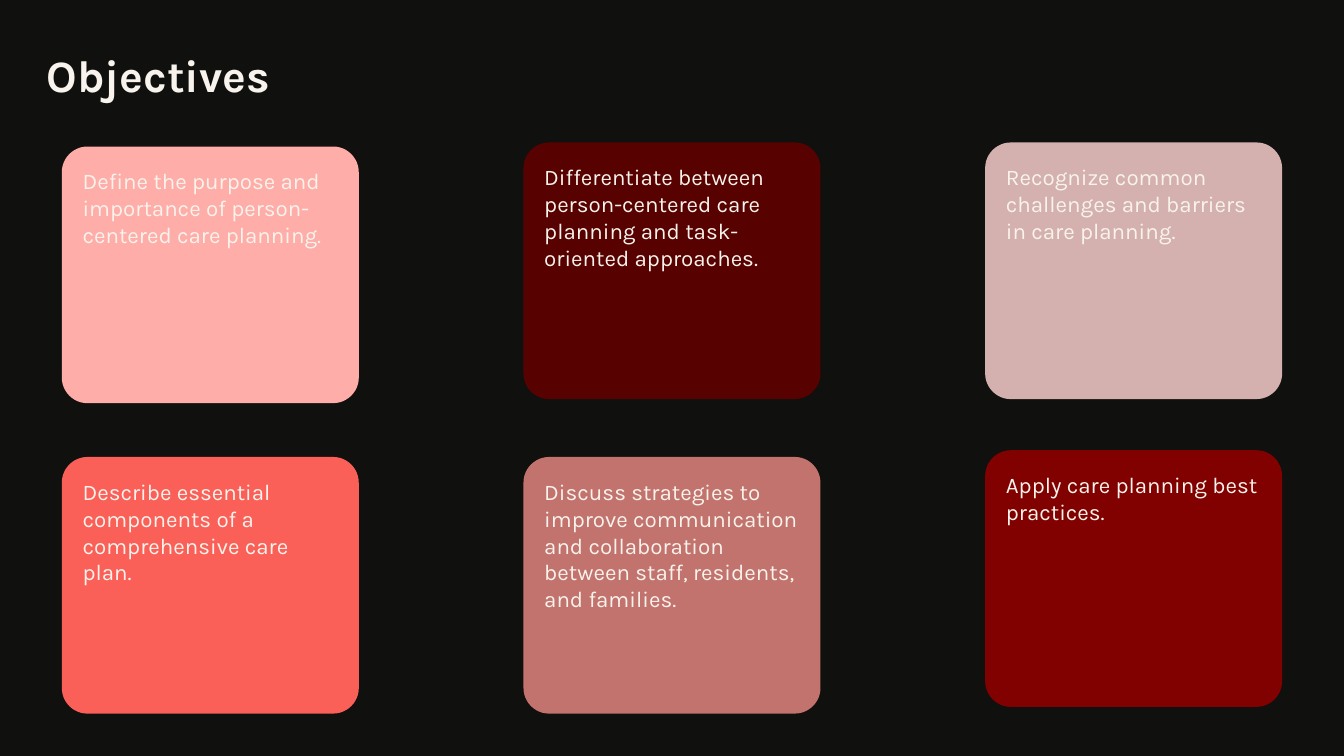
from pptx import Presentation
from pptx.dml.color import RGBColor
from pptx.enum.shapes import MSO_SHAPE
from pptx.enum.text import MSO_ANCHOR, PP_ALIGN
from pptx.util import Inches, Pt

ROUNDED = MSO_SHAPE.ROUNDED_RECTANGLE
TOP, MIDDLE = MSO_ANCHOR.TOP, MSO_ANCHOR.MIDDLE
LEFT = PP_ALIGN.LEFT

COLORS = {
    "background": "10100F",
    "text": "F8F3EC",
    "pink": "FFADA8",
    "coral": "FB6058",
    "maroon": "570100",
    "rose": "C3736E",
    "dusty": "D4B1AE",
    "crimson": "810100",
}
FONT = "Karla"
SLIDE_WIDTH = 10
SLIDE_HEIGHT = SLIDE_WIDTH * 9 / 16
INSET = 0.1
CARD_WIDTH, CARD_HEIGHT = 2.21, 1.91
SIDE_MARGIN = 0.46
COLUMN_STEP = (SLIDE_WIDTH - 2 * SIDE_MARGIN - CARD_WIDTH) / 2


def color(name):
    return RGBColor.from_string(COLORS[name])


def write(holder, text, size, anchor, bold=False):
    frame = holder.text_frame
    frame.word_wrap = True
    frame.vertical_anchor = anchor
    frame.margin_left = frame.margin_right = Inches(INSET)
    frame.margin_top = frame.margin_bottom = Inches(INSET)
    frame.text = text
    paragraph = frame.paragraphs[0]
    paragraph.alignment = LEFT
    font = paragraph.runs[0].font
    font.name = FONT
    font.size = Pt(size)
    font.bold = bold
    font.color.rgb = color("text")


presentation = Presentation()
presentation.slide_width = Inches(SLIDE_WIDTH)
presentation.slide_height = Inches(SLIDE_HEIGHT)
slide = presentation.slides.add_slide(presentation.slide_layouts[6])
slide.background.fill.solid()
slide.background.fill.fore_color.rgb = color("background")

heading = slide.shapes.add_textbox(Inches(0.25), Inches(0.25), Inches(7.02), Inches(0.61))
write(heading, "Objectives", 24, MIDDLE, bold=True)

objectives = [
    (0, 1.09, "pink", "Define the purpose and importance of person-centered care planning."),
    (0, 3.4, "coral", "Describe essential components of a comprehensive care plan."),
    (1, 1.06, "maroon", "Differentiate between person-centered care planning and task-oriented approaches."),
    (1, 3.4, "rose", "Discuss strategies to improve communication and collaboration between staff, residents, and families."),
    (2, 1.06, "dusty", "Recognize common challenges and barriers in care planning."),
    (2, 3.35, "crimson", "Apply care planning best practices."),
]
for column, top, fill, objective in objectives:
    card = slide.shapes.add_shape(
        ROUNDED,
        Inches(SIDE_MARGIN + column * COLUMN_STEP),
        Inches(top),
        Inches(CARD_WIDTH),
        Inches(CARD_HEIGHT),
    )
    card.adjustments[0] = 0.1
    card.shadow.inherit = False
    card.fill.solid()
    card.fill.fore_color.rgb = color(fill)
    card.line.fill.background()
    write(card, objective, 12, TOP)

presentation.save("out.pptx")
